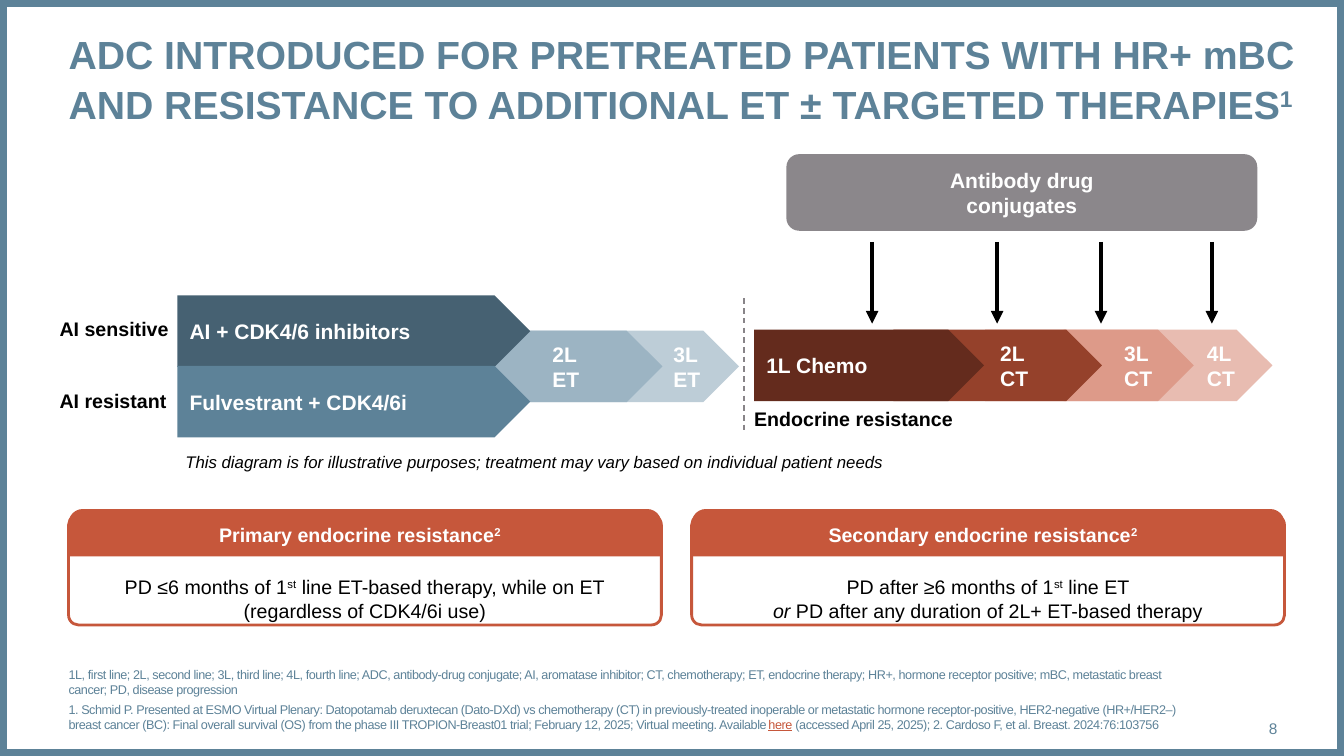
from dataclasses import dataclass

from lxml.etree import SubElement
from pptx import Presentation
from pptx.dml.color import RGBColor
from pptx.enum.dml import MSO_LINE
from pptx.enum.shapes import MSO_CONNECTOR, MSO_SHAPE
from pptx.enum.text import MSO_ANCHOR, PP_ALIGN
from pptx.oxml.ns import qn
from pptx.util import Pt

PX = 9144  # 100 px to the inch


@dataclass(frozen=True)
class Theme:
    font: str = "Arial"
    blue: str = "5D8298"
    dark_blue: str = "466172"
    mid_blue: str = "9CB4C3"
    pale_blue: str = "BDCDD7"
    rust: str = "C6573B"
    chemo_first: str = "642B1D"
    chemo_second: str = "95412B"
    chemo_third: str = "DD9A89"
    chemo_fourth: str = "E8BCB1"
    grey: str = "8B878B"
    divider: str = "888488"
    white: str = "FFFFFF"
    black: str = "000000"
    title_size: int = 28
    step_size: int = 15
    body_size: int = 14
    note_size: int = 12
    page_size: int = 11
    footnote_size: int = 9


THEME = Theme()


def rgb(value):
    return RGBColor.from_string(value)


def write(paragraph, spans, size, color, bold=None, italic=None, align=PP_ALIGN.LEFT):
    """Fill a paragraph from (text, style) spans; style is "", "super", "italic" or "link"."""
    paragraph.alignment = align
    font = paragraph.font
    font.name, font.size, font.bold, font.italic = THEME.font, Pt(size), bold, italic
    font.color.rgb = rgb(color)
    for text, style in spans:
        for index, line in enumerate(text.split("\n")):
            if index:
                paragraph.add_line_break()
            if not line:
                continue
            run = paragraph.add_run()
            run.text = line
            if style == "super":
                run.font._element.set("baseline", "30000")
            elif style == "italic":
                run.font.italic = True
            elif style == "link":
                run.font.underline = True
                run.font.color.rgb = rgb(THEME.rust)


def set_frame(shape, insets=(0, 0, 0, 0), anchor=MSO_ANCHOR.TOP, wrap=True):
    frame = shape.text_frame
    frame.word_wrap = wrap
    frame.vertical_anchor = anchor
    (frame.margin_left, frame.margin_top,
     frame.margin_right, frame.margin_bottom) = [inset * PX for inset in insets]
    return frame


def add_text(slide, box, spans, size, color, insets=(0, 0, 0, 0),
             anchor=MSO_ANCHOR.TOP, wrap=True, **style):
    text_box = slide.shapes.add_textbox(*[length * PX for length in box])
    frame = set_frame(text_box, insets, anchor, wrap)
    write(frame.paragraphs[0], spans, size, color, **style)
    return frame


def add_block(slide, kind, box, fill=None, line=None, width=0, adjustments=()):
    shape = slide.shapes.add_shape(kind, *[length * PX for length in box])
    shape.shadow.inherit = False
    if fill:
        shape.fill.solid()
        shape.fill.fore_color.rgb = rgb(fill)
    else:
        shape.fill.background()
    if line:
        shape.line.color.rgb = rgb(line)
        shape.line.width = Pt(width)
    else:
        shape.line.fill.background()
    for index, value in enumerate(adjustments):
        shape.adjustments[index] = value
    return shape


def add_vertical(slide, x, top, bottom, color, width):
    line = slide.shapes.add_connector(
        MSO_CONNECTOR.STRAIGHT, x * PX, top * PX, x * PX, bottom * PX)
    line.line.color.rgb = rgb(color)
    line.line.width = Pt(width)
    SubElement(line._element.spPr, qn("a:effectLst"))
    return line


def add_step(slide, box, label, fill, text_left=12):
    step = add_block(slide, MSO_SHAPE.PENTAGON, box, fill)
    frame = set_frame(step, (text_left, 5, 10, 5), MSO_ANCHOR.MIDDLE)
    write(frame.paragraphs[0], [(label, "")], THEME.step_size, THEME.white, bold=True)


def add_endocrine_pathway(slide, left, top):
    height, first_width, later_width = 71, 350, 207
    middle = top + 35
    add_step(slide, (left + 350, middle, later_width, height), "3L\nET", THEME.pale_blue, 142)
    add_step(slide, (left + 274, middle, later_width, height), "2L\nET", THEME.mid_blue, 98)
    starts = [("AI sensitive", "AI + CDK4/6 inhibitors", THEME.dark_blue),
              ("AI resistant", "Fulvestrant + CDK4/6i", THEME.blue)]
    for row, (group, therapy, fill) in enumerate(starts):
        row_top = top + 70 * row
        add_step(slide, (left, row_top, first_width, height), therapy, fill)
        add_text(slide, (left - 117, row_top + 21 + 2 * row, 109, 24), [(group, "")],
                 THEME.body_size, THEME.black, wrap=False, bold=True)
    add_text(slide, (left - 2, top + 150, 1050, 30),
             [("This diagram is for illustrative purposes; treatment may vary "
               "based on individual patient needs", "")],
             THEME.note_size, THEME.black, insets=(10, 5, 10, 5), italic=True)


def add_chemo_pathway(slide, left, top):
    steps = [(307, 207, "4L\nCT", THEME.chemo_fourth, 142),
             (229, 207, "3L\nCT", THEME.chemo_third, 138),
             (138, 207, "2L\nCT", THEME.chemo_second, 106),
             (0, 228, "1L Chemo", THEME.chemo_first, 12)]
    for offset, width, label, fill, text_left in steps:
        add_step(slide, (left + offset, top, width, 71), label, fill, text_left)
    add_text(slide, (left, top + 77, 218, 23), [("Endocrine resistance", "")],
             THEME.body_size, THEME.black, bold=True)
    divider = add_vertical(slide, left - 10, top - 31, top + 100, THEME.divider, 1)
    divider.line.dash_style = MSO_LINE.DASH


def add_conjugates(slide, left, top):
    box = add_block(slide, MSO_SHAPE.ROUNDED_RECTANGLE, (left, top, 467, 76), THEME.grey)
    frame = set_frame(box, (10, 5, 10, 5), MSO_ANCHOR.MIDDLE)
    write(frame.paragraphs[0], [("Antibody drug\nconjugates", "")], THEME.step_size,
          THEME.white, bold=True, align=PP_ALIGN.CENTER)
    for offset in (85, 209, 312, 422):
        arrow = add_vertical(slide, left + offset, top + 87, top + 168, THEME.black, 3)
        SubElement(arrow.line._get_or_add_ln(), qn("a:tailEnd"), type="triangle")


def add_resistance_card(slide, left, top, heading, definition, space_after):
    width = 588
    body = add_block(slide, MSO_SHAPE.ROUNDED_RECTANGLE, (left, top + 6, width, 109),
                     THEME.white, THEME.rust, 2, [0.09])
    paragraph = set_frame(body, (10, 63, 10, 0), MSO_ANCHOR.BOTTOM).paragraphs[0]
    write(paragraph, definition, THEME.body_size, THEME.black, align=PP_ALIGN.CENTER)
    paragraph.space_after = Pt(space_after)
    header = add_block(slide, MSO_SHAPE.ROUND_2_SAME_RECTANGLE, (left, top, width, 47),
                       THEME.rust, adjustments=[0.3, 0])
    frame = set_frame(header, (5, 5, 15, 5), MSO_ANCHOR.MIDDLE)
    write(frame.paragraphs[0], [(heading, ""), ("2", "super")], THEME.body_size,
          THEME.white, bold=True, align=PP_ALIGN.CENTER)


def add_footer(slide, left, top):
    abbreviations = [(
        "1L, first line; 2L, second line; 3L, third line; 4L, fourth line; ADC, antibody-drug "
        "conjugate; AI, aromatase inhibitor; CT, chemotherapy; ET, endocrine therapy; HR+, hormone "
        "receptor positive; mBC, metastatic breast cancer; PD, disease progression", "")]
    references = [
        ("1. Schmid P. Presented at ESMO Virtual Plenary: Datopotamab deruxtecan (Dato-DXd) vs "
         "chemotherapy (CT) in previously-treated inoperable or metastatic hormone "
         "receptor-positive, HER2-negative (HR+/HER2–) breast cancer (BC): Final overall survival "
         "(OS) from the phase III TROPION-Breast01 trial; February 12, 2025; Virtual meeting. "
         "Available ", ""),
        ("here", "link"),
        (" (accessed April 25, 2025); 2. Cardoso F, et al. Breast. 2024:76:103756", "")]
    frame = add_text(slide, (left, top, 1113, 40), abbreviations, THEME.footnote_size,
                     THEME.blue, anchor=MSO_ANCHOR.BOTTOM)
    paragraph = frame.add_paragraph()
    write(paragraph, references, THEME.footnote_size, THEME.blue)
    paragraph.space_before = Pt(3)
    for note in frame.paragraphs:
        for run in note.runs:
            run.font._element.set("spc", "-30")
    add_text(slide, (left + 1113, top + 17, 86, 40), [("8", "")], THEME.page_size,
             THEME.blue, anchor=MSO_ANCHOR.MIDDLE, align=PP_ALIGN.RIGHT)


def add_title(slide, left, top):
    frame = add_text(slide, (left, top, 1221, 95),
                     [("ADC INTRODUCED FOR PRETREATED PATIENTS WITH HR+ mBC "
                       "AND RESISTANCE TO ADDITIONAL ET ± TARGETED THERAPIES", ""),
                      ("1", "super")], THEME.title_size, THEME.blue, bold=True)
    frame.paragraphs[0].line_spacing = 1.05


def main():
    presentation = Presentation()
    presentation.slide_width, presentation.slide_height = 1333 * PX, 750 * PX
    slide = presentation.slides.add_slide(presentation.slide_layouts[6])
    add_block(slide, MSO_SHAPE.RECTANGLE, (0, 0, 1333, 750), line=THEME.blue, width=10)
    add_title(slide, 68, 28)
    add_endocrine_pathway(slide, 176, 293)
    add_chemo_pathway(slide, 748, 327)
    add_conjugates(slide, 780, 153)
    add_resistance_card(
        slide, 68, 505, "Primary endocrine resistance",
        [("PD ≤6 months of 1", ""), ("st", "super"),
         (" line ET-based therapy, while on ET\n(regardless of CDK4/6i use)", "")], 6)
    add_resistance_card(
        slide, 686, 505, "Secondary endocrine resistance",
        [("PD after ≥6 months of 1", ""), ("st", "super"), (" line ET\n", ""),
         ("or", "italic"), (" PD after any duration of 2L+ ET-based therapy", "")], 8)
    add_footer(slide, 68, 686)
    presentation.save("out.pptx")


if __name__ == "__main__":
    main()
